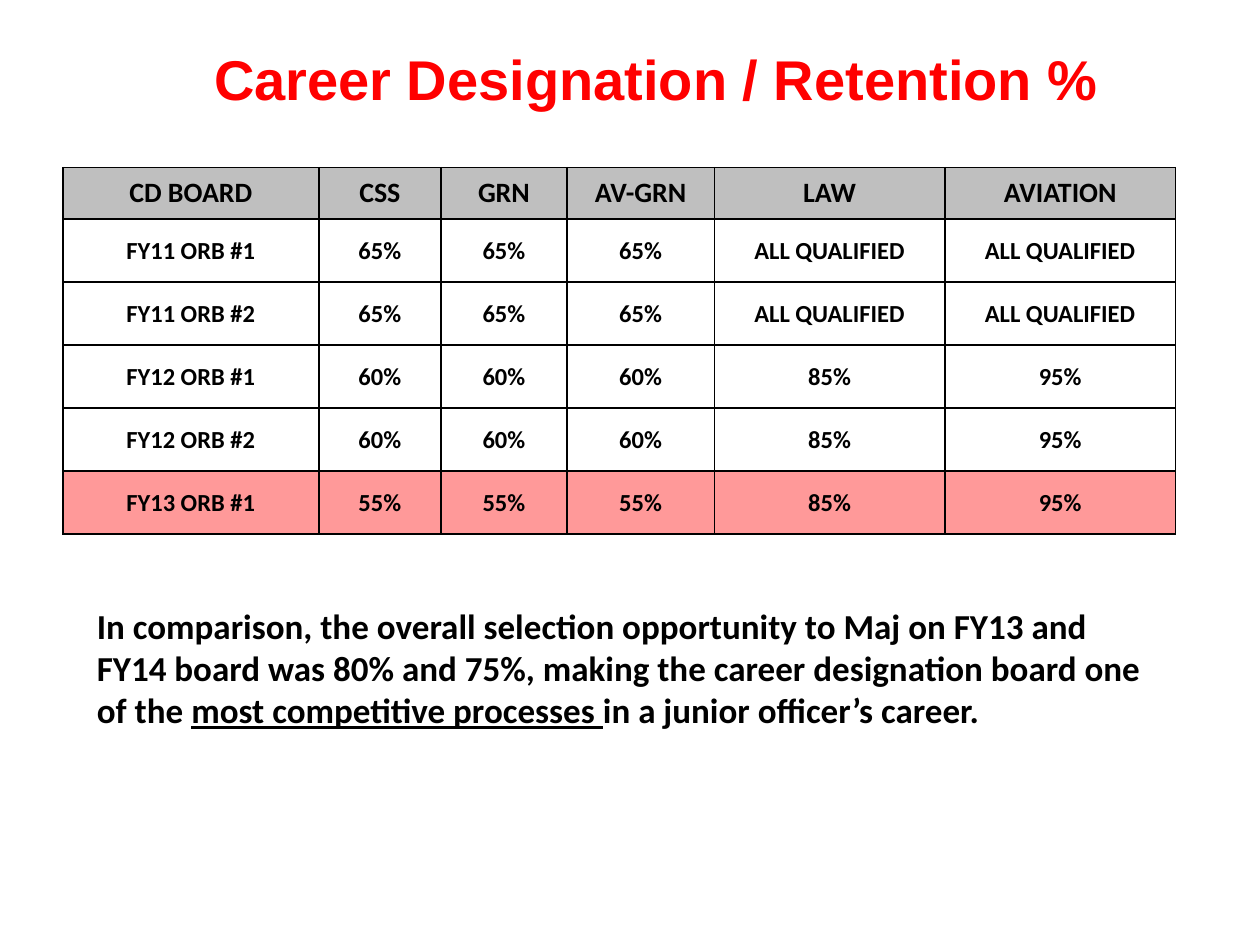
from lxml.etree import SubElement
from pptx import Presentation
from pptx.dml.color import RGBColor
from pptx.enum.text import MSO_ANCHOR, MSO_AUTO_SIZE, PP_ALIGN
from pptx.oxml import parse_xml
from pptx.oxml.ns import nsdecls, qn
from pptx.util import Inches, Pt

BLACK = RGBColor(0x00, 0x00, 0x00)
WHITE = RGBColor(0xFF, 0xFF, 0xFF)
RED = RGBColor(0xFF, 0x00, 0x00)
GREY = RGBColor(0xBF, 0xBF, 0xBF)

HEADERS = ["CD BOARD", "CSS", "GRN", "AV-GRN", "LAW", "AVIATION"]
# Board, rate shared by CSS, GRN and AV-GRN, law, aviation
BOARDS = [
    ("FY11 ORB #1", "65%", "ALL QUALIFIED", "ALL QUALIFIED"),
    ("FY11 ORB #2", "65%", "ALL QUALIFIED", "ALL QUALIFIED"),
    ("FY12 ORB #1", "60%", "85%", "95%"),
    ("FY12 ORB #2", "60%", "85%", "95%"),
    ("FY13 ORB #1", "55%", "85%", "95%"),
]
COLUMN_WIDTHS = [2.03, 0.97, 1, 1.17, 1.83, 1.83]
HEADER_HEIGHT, BOARD_HEIGHT = 0.41, 0.5


def format_run(run, size, font_name="Calibri", color=BLACK):
    run.font.name = font_name
    run.font.size = Pt(size)
    run.font.bold = True
    run.font.color.rgb = color


def add_text_shadow(run):
    shadow = parse_xml(
        f'<a:effectLst {nsdecls("a")}>'
        '<a:outerShdw blurRad="38100" dist="38100" dir="2700000" algn="tl">'
        '<a:srgbClr val="000000"/></a:outerShdw></a:effectLst>'
    )
    run.font.fill  # the colour fill precedes the effect
    run._r.rPr.find(qn("a:solidFill")).addnext(shadow)


def add_title(slide, left, top, width, height):
    title = slide.shapes.title
    title.left, title.top, title.width, title.height = left, top, width, height
    text_frame = title.text_frame
    text_frame.text = "Career Designation / Retention %"
    text_frame.auto_size = MSO_AUTO_SIZE.NONE
    text_frame.vertical_anchor = MSO_ANCHOR.MIDDLE
    paragraph = text_frame.paragraphs[0]
    paragraph.alignment = PP_ALIGN.CENTER
    format_run(paragraph.runs[0], 32, "Arial", RED)
    add_text_shadow(paragraph.runs[0])


def add_borders(cell):
    properties = cell._tc.get_or_add_tcPr()
    for index, side in enumerate(("lnL", "lnR", "lnT", "lnB")):
        properties.insert(index, parse_xml(
            f'<a:{side} {nsdecls("a")} w="{Pt(1)}"><a:solidFill>'
            f'<a:srgbClr val="{BLACK}"/></a:solidFill></a:{side}>'
        ))


def fill_cell(cell, color, opacity=100):
    if color is None:
        cell.fill.background()
        return
    cell.fill.solid()
    cell.fill.fore_color.rgb = color
    if opacity < 100:
        color_element = cell._tc.tcPr.find(qn("a:solidFill"))[0]
        SubElement(color_element, qn("a:alpha")).set("val", str(opacity * 1000))


def write_row(row, texts, size, color, opacity=100):
    for cell, text in zip(row.cells, texts):
        cell.text_frame.text = text
        cell.vertical_anchor = MSO_ANCHOR.MIDDLE
        paragraph = cell.text_frame.paragraphs[0]
        paragraph.alignment = PP_ALIGN.CENTER
        format_run(paragraph.runs[0], size)
        fill_cell(cell, color, opacity)
        add_borders(cell)


def add_board_table(slide, left, top, width, height):
    table = slide.shapes.add_table(
        len(BOARDS) + 1, len(HEADERS), left, top, width, height
    ).table
    table.horz_banding = False
    for column, column_width in zip(table.columns, COLUMN_WIDTHS):
        column.width = Inches(column_width)

    # Header row
    header, *board_rows = table.rows
    header.height = Inches(HEADER_HEIGHT)
    write_row(header, HEADERS, 16, GREY)

    # Board rows, with the latest one highlighted
    for index, (row, board) in enumerate(zip(board_rows, BOARDS)):
        name, shared_rate, law, aviation = board
        row.height = Inches(BOARD_HEIGHT)
        if index == len(BOARDS) - 1:
            color = RED
        else:
            color = WHITE if index % 2 == 0 else None
        write_row(row, [name, *[shared_rate] * 3, law, aviation], 14, color, 40)


def add_comparison(slide, left, top, width, height):
    text_frame = slide.shapes.add_textbox(left, top, width, height).text_frame
    text_frame.word_wrap = True
    paragraph = text_frame.paragraphs[0]
    for text, underlined in (
        ("In comparison, the overall selection opportunity to Maj on FY13 and "
         "FY14 board was 80% and 75%, making the career designation board one "
         "of the ", False),
        ("most competitive processes ", True),
        ("in a junior officer’s career.", False),
    ):
        run = paragraph.add_run()
        run.text = text
        format_run(run, 20)
        run.font.underline = underlined


def main():
    presentation = Presentation()
    presentation.slide_width = Inches(10)
    presentation.slide_height = Inches(7.5)
    title_only = presentation.slide_layouts[5]
    slide = presentation.slides.add_slide(title_only)

    add_title(slide, Inches(1.5), Inches(0.33), Inches(7.42), Inches(0.58))
    add_board_table(slide, Inches(0.5), Inches(1.33), Inches(8.83), Inches(2.91))
    add_comparison(slide, Inches(0.67), Inches(4.75), Inches(8.58), Inches(1.45))
    presentation.save("out.pptx")


if __name__ == "__main__":
    main()
